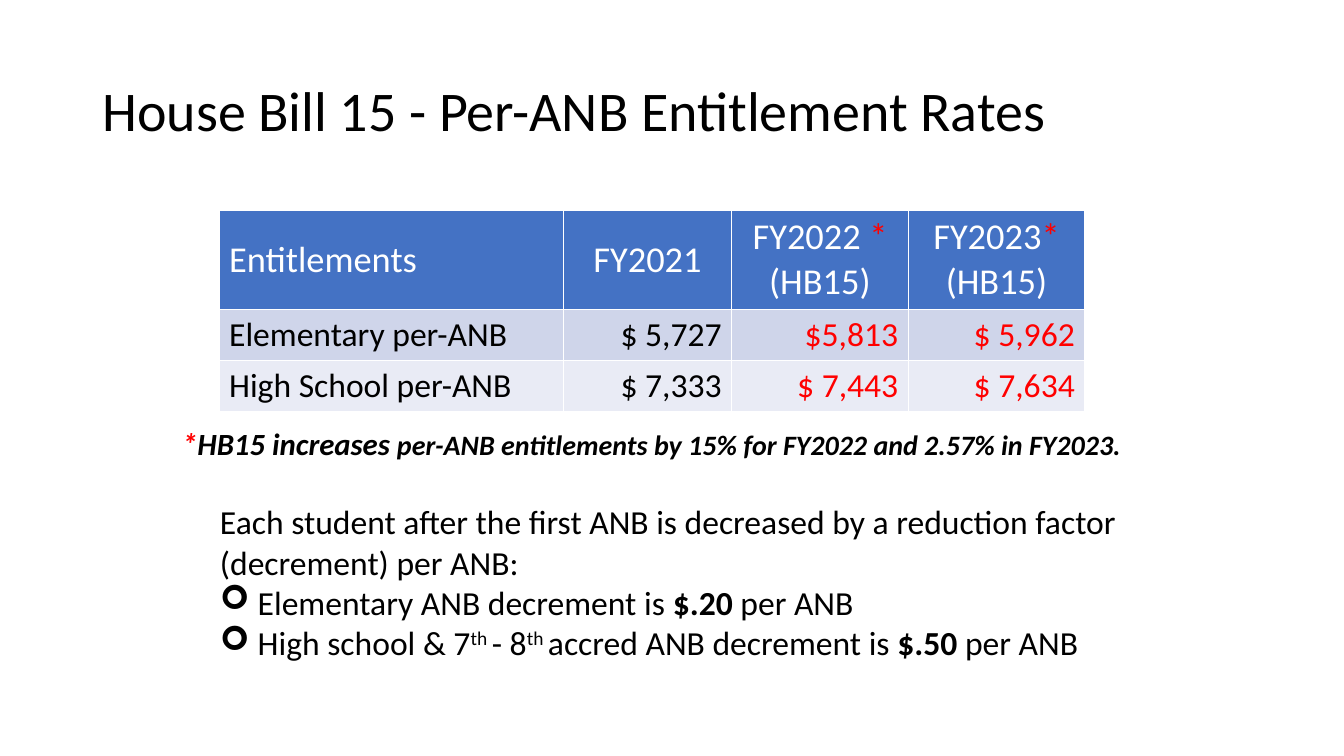
"""Build the House Bill 15 entitlement rates slide."""
import pptx
import pptx.dml.color
import pptx.enum.text
import pptx.oxml
import pptx.oxml.ns
import pptx.util

Cm = pptx.util.Cm
Pt = pptx.util.Pt
ALIGN = pptx.enum.text.PP_ALIGN
ANCHOR = pptx.enum.text.MSO_ANCHOR
AUTO = pptx.enum.text.MSO_AUTO_SIZE
BLACK, WHITE, RED = "000000", "FFFFFF", "FF0000"


def rgb(value):
    return pptx.dml.color.RGBColor.from_string(value)


def add_run(p, text, size=24, color=BLACK, bold=False, italic=False, raised=False):
    r = p.add_run()
    r.text = text
    r.font.name = "Calibri"
    r.font.size = Pt(size)
    r.font.color.rgb = rgb(color)
    r.font.bold = bold
    r.font.italic = italic
    if raised:
        r._r.get_or_add_rPr().set("baseline", "30000")


def add_xml(parent, xml):
    ns = pptx.oxml.ns.nsdecls("a")
    parent.append(pptx.oxml.parse_xml(xml.replace(" ", f" {ns} ", 1)))


class RateSlide:
    def __init__(self, prs):
        self.header_fill = "4472C4"
        self.band_fills = ["CFD5EA", "E9EBF5"]
        self.indent = Cm(0.95)
        self.slide = prs.slides.add_slide(prs.slide_layouts[1])

    def place(self, sp, left, top, width, height):
        sp.left, sp.top, sp.width, sp.height = map(Cm, (left, top, width, height))
        tf = sp.text_frame
        tf.word_wrap = True
        tf.auto_size = AUTO.NONE
        return tf

    def title(self, text, *box):
        tf = self.place(self.slide.shapes.title, *box)
        tf.vertical_anchor = ANCHOR.MIDDLE
        p = tf.paragraphs[0]
        p.alignment = ALIGN.LEFT
        p.line_spacing = 0.9
        add_run(p, text, size=40)

    def note(self, runs, *box):
        tf = self.place(self.slide.shapes.add_textbox(0, 0, 0, 0), *box)
        for text, fmt in runs:
            add_run(tf.paragraphs[0], text, bold=True, italic=True, **fmt)

    def body(self, intro, items, *box):
        tf = self.place(self.slide.placeholders[1], *box)
        tf.vertical_anchor = ANCHOR.TOP
        for i, runs in enumerate([intro] + items):
            p = tf.add_paragraph() if i else tf.paragraphs[0]
            p.space_before = Pt(0)
            pPr = p._p.get_or_add_pPr()
            pPr.set("marL", str(self.indent if i else 0))
            pPr.set("indent", str(-self.indent if i else 0))
            if i:
                add_xml(pPr, '<a:buFont typeface="Wingdings"/>')
                add_xml(pPr, '<a:buChar char="➢"/>')
            else:
                add_xml(pPr, "<a:buNone />")
            for text, fmt in runs:
                add_run(p, text, **fmt)

    def cell(self, cell, runs, fill, align, anchor):
        tcPr = cell._tc.get_or_add_tcPr()
        for side in "LRTB":
            add_xml(tcPr, f'<a:ln{side} w="12700"><a:solidFill>'
                          f'<a:srgbClr val="{WHITE}"/></a:solidFill></a:ln{side}>')
        cell.fill.solid()
        cell.fill.fore_color.rgb = rgb(fill)
        cell.vertical_anchor = anchor
        p = cell.text_frame.paragraphs[0]
        p.alignment = align
        for text, fmt in runs:
            add_run(p, text, **fmt)

    def table(self, headers, rows, left, top, widths, heights):
        frame = self.slide.shapes.add_table(
            len(heights), len(widths), Cm(left), Cm(top),
            Cm(sum(widths)), Cm(sum(heights)))
        table = frame.table
        for column, width in zip(table.columns, widths):
            column.width = Cm(width)
        for row, height in zip(table.rows, heights):
            row.height = Cm(height)
        for j, parts in enumerate(headers):
            runs = [(t, dict(size=26, color=RED if t == "*" else WHITE)) for t in parts]
            self.cell(table.cell(0, j), runs, self.header_fill,
                      ALIGN.CENTER if j else ALIGN.LEFT, ANCHOR.MIDDLE)
        for i, row in enumerate(rows):
            for j, text in enumerate(row):
                runs = [(text, dict(color=RED if j > 1 else BLACK))]
                self.cell(table.cell(i + 1, j), runs, self.band_fills[i % 2],
                          ALIGN.RIGHT if j else ALIGN.LEFT, ANCHOR.TOP)


def main():
    prs = pptx.Presentation()
    prs.slide_width, prs.slide_height = Cm(33.87), Cm(19.05)
    s = RateSlide(prs)
    s.title("House Bill 15 - Per-ANB Entitlement Rates", 2.33, 1.01, 29.21, 3.68)
    s.table(
        [["Entitlements"], ["FY2021"],
         ["FY2022 ", "*", " (HB15)"], ["FY2023", "*", " (HB15)"]],
        [["Elementary per-ANB", "$ 5,727", "$5,813", "$ 5,962"],
         ["High School per-ANB", "$ 7,333", "$ 7,443", "$ 7,634"]],
        5.52, 5.29, [8.68, 4.24, 4.45, 4.45], [2.5, 1.29, 1.29])
    s.note(
        [("*", dict(size=22, color=RED)),
         ("HB15 increases ", dict(size=22)),
         ("per-ANB entitlements by 15% for FY2022 and 2.57% in FY2023.", dict(size=20))],
        4.34, 10.59, 24.66, 1.19)
    strong, raised = dict(bold=True), dict(raised=True)
    s.body(
        [("Each student after the first ANB is decreased by a reduction factor "
          "(decrement) per ANB:", {})],
        [[("Elementary ANB decrement is ", {}), ("$.20", strong), (" per ANB", {})],
         [("High school & 7", {}), ("th ", raised), ("- 8", {}), ("th ", raised),
          ("accred ANB decrement is ", {}), ("$.50", strong), (" per ANB", {})]],
        5.29, 12.5, 23.28, 4.37)
    prs.save("out.pptx")


if __name__ == "__main__":
    main()
